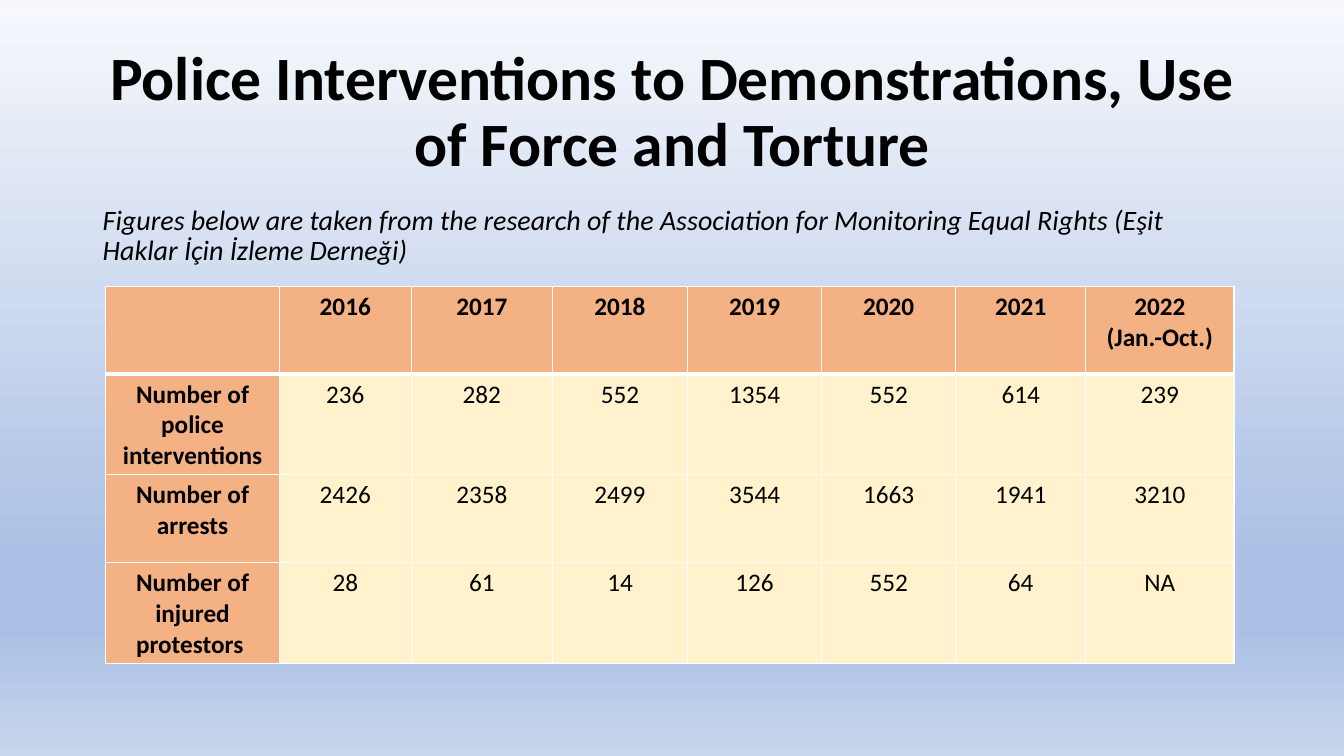
from copy import deepcopy
from dataclasses import dataclass

from lxml.etree import SubElement
from pptx import Presentation
from pptx.dml.color import RGBColor
from pptx.enum.text import MSO_ANCHOR as Anchor, PP_ALIGN as Align
from pptx.oxml.ns import qn
from pptx.util import Inches, Pt


@dataclass(frozen=True)
class Theme:
    font: str = "Calibri"
    ink: str = "000000"
    header: str = "F4B183"
    body: str = "FFF2CC"
    border: str = "FFFFFF"
    title_size: int = 44
    intro_size: int = 20
    table_size: int = 18
    background: tuple = ((0, "F6F8FC"), (0.74, "ABC0E4"), (0.83, "ABC0E4"), (1, "C7D5ED"))


theme = Theme()


def add_text(paragraph, text, size, bold=False, italic=False):
    run = paragraph.add_run()
    run.text = text
    run.font.name = theme.font
    run.font.size = Pt(size)
    run.font.bold = bold
    run.font.italic = italic
    run.font.color.rgb = RGBColor.from_string(theme.ink)


def set_borders(cell, widths):
    """Draw the left, right, top and bottom borders, widths in points."""
    properties = cell._tc.get_or_add_tcPr()
    for index, (side, width) in enumerate(zip("LRTB", widths)):
        line = SubElement(properties, qn(f"a:ln{side}"), w=str(Pt(width)))
        properties.insert(index, line)
        fill = SubElement(line, qn("a:solidFill"))
        SubElement(fill, qn("a:srgbClr"), val=theme.border)


presentation = Presentation()
presentation.slide_width = Inches(13.33)
presentation.slide_height = Inches(7.5)
slide = presentation.slides.add_slide(presentation.slide_layouts[6])

# Background gradient, running from top to bottom
background = slide.background.fill
background.gradient()
background.gradient_angle = 270
stop_list = slide.element.find(".//" + qn("a:gsLst"))
while len(stop_list) < len(theme.background):
    stop_list.append(deepcopy(stop_list[0]))
for stop, (position, color) in zip(background.gradient_stops, theme.background):
    stop.position = position
    stop.color.rgb = RGBColor.from_string(color)

# Title and introduction share the same left edge and width
text_blocks = [
    ("Police Interventions to Demonstrations, Use of Force and Torture",
     0.4, 1.45, theme.title_size, Anchor.MIDDLE, Align.CENTER, True),
    ("Figures below are taken from the research of the Association for Monitoring "
     "Equal Rights (Eşit Haklar İçin İzleme Derneği)",
     2, 0.8, theme.intro_size, Anchor.TOP, Align.LEFT, False),
]
for text, top, height, size, anchor, alignment, is_title in text_blocks:
    box = slide.shapes.add_textbox(Inches(0.92), Inches(top), Inches(11.5), Inches(height))
    frame = box.text_frame
    frame.word_wrap = True
    frame.vertical_anchor = anchor
    paragraph = frame.paragraphs[0]
    paragraph.alignment = alignment
    paragraph.line_spacing = 0.9
    add_text(paragraph, text, size, bold=is_title, italic=not is_title)

# Table of figures by year
rows = [
    ["", "2016", "2017", "2018", "2019", "2020", "2021", "2022\n(Jan.-Oct.)"],
    ["Number of police interventions", "236", "282", "552", "1354", "552", "614", "239"],
    ["Number of arrests", "2426", "2358", "2499", "3544", "1663", "1941", "3210"],
    ["Number of injured protestors ", "28", "61", "14", "126", "552", "64", "NA"],
]
column_widths = [1.72, 1.31, 1.4, 1.34, 1.33, 1.33, 1.29, 1.47]
row_height = 0.87
table = slide.shapes.add_table(
    len(rows), len(column_widths), Inches(1.05), Inches(2.84),
    Inches(sum(column_widths)), Inches(row_height * len(rows))).table
for column, width in zip(table.columns, column_widths):
    column.width = Inches(width)

for row_index, row in enumerate(rows):
    table.rows[row_index].height = Inches(row_height)
    for column_index, text in enumerate(row):
        cell = table.cell(row_index, column_index)
        is_header = row_index == 0 or column_index == 0
        cell.fill.solid()
        cell.fill.fore_color.rgb = RGBColor.from_string(theme.header if is_header else theme.body)
        set_borders(cell, (1, 1, 3 if row_index == 1 else 1, 3 if row_index == 0 else 1))
        for line_index, line in enumerate(text.splitlines()):
            frame = cell.text_frame
            paragraph = frame.add_paragraph() if line_index else frame.paragraphs[0]
            paragraph.alignment = Align.CENTER
            add_text(paragraph, line, theme.table_size, bold=is_header)

presentation.save("out.pptx")
